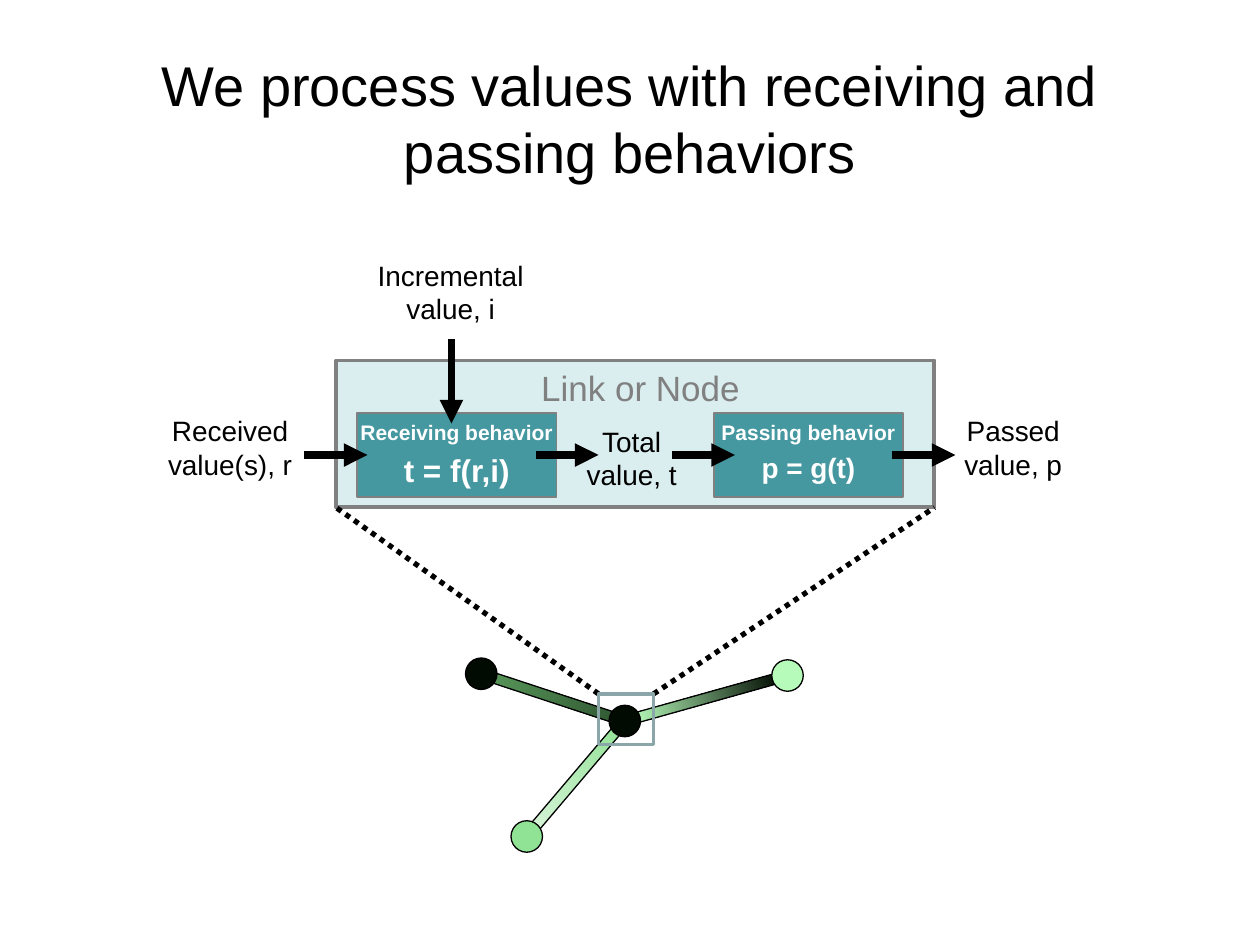
from dataclasses import dataclass
from math import atan2, degrees
from pptx import Presentation
from pptx.dml.color import RGBColor
from pptx.enum import dml, shapes, text
from pptx.oxml import parse_xml
from pptx.oxml.ns import nsdecls
from pptx.util import Pt


@dataclass(frozen=True)
class Theme:
    font: str = "Arial"
    ink: str = "000000"
    white: str = "FFFFFF"
    gray: str = "808080"
    panel: str = "DAEDEF"
    behavior: str = "4597A0"
    focus: str = "8AA6A8"
    dark: str = "010B01"
    green: str = "90E294"
    light: str = "B7FBBA"
    pale: str = "DBF5DC"
    title: int = 32
    heading: int = 20
    formula: int = 18
    label: int = 16
    caption: int = 12


THEME = Theme()
RECTANGLE = shapes.MSO_SHAPE.RECTANGLE
OVAL = shapes.MSO_SHAPE.OVAL


def rgb(color):
    return RGBColor.from_string(color)


def style_text(paragraph, size, color, bold=False):
    paragraph.alignment = text.PP_ALIGN.CENTER
    paragraph.font.name = THEME.font
    paragraph.font.size = Pt(size)
    paragraph.font.bold = bold
    paragraph.font.color.rgb = rgb(color)


def add_label(slide, box, wording, size=THEME.label, color=THEME.ink, bold=False):
    frame = slide.shapes.add_textbox(*map(Pt, box)).text_frame
    frame.word_wrap = True
    frame.text = wording
    style_text(frame.paragraphs[0], size, color, bold)


def add_outlined(slide, kind, box, fill, line, width):
    outlined = slide.shapes.add_shape(kind, *map(Pt, box))
    outlined.shadow.inherit = False
    if fill:
        outlined.fill.solid()
        outlined.fill.fore_color.rgb = rgb(fill)
    else:
        outlined.fill.background()
    outlined.line.color.rgb = rgb(line)
    outlined.line.width = Pt(width)
    return outlined


def add_line(slide, start, end, width):
    line = slide.shapes.add_connector(
        shapes.MSO_CONNECTOR.STRAIGHT, *map(Pt, (*start, *end)))
    line.line.color.rgb = rgb(THEME.ink)
    line.line.width = Pt(width)
    line._element.spPr.append(parse_xml(f"<a:effectLst {nsdecls('a')}/>"))
    return line


def add_arrow(slide, start, end):
    arrow = add_line(slide, start, end, 4.5)
    arrow.line._get_or_add_ln().append(
        parse_xml(f'<a:tailEnd {nsdecls("a")} type="triangle"/>'))


def add_title(slide, box, wording):
    title = slide.shapes.title
    title.left, title.top, title.width, title.height = map(Pt, box)
    title.text_frame.text = wording
    title.text_frame.vertical_anchor = text.MSO_ANCHOR.MIDDLE
    style_text(title.text_frame.paragraphs[0], THEME.title, THEME.ink)


def add_behavior(slide, box, name, formula, size):
    left, top, width, height = box
    add_outlined(slide, RECTANGLE, box, THEME.behavior, THEME.gray, 0.75)
    add_label(slide, (left - 18, top, width + 36, 22), name,
              THEME.caption, THEME.white, True)
    add_label(slide, (left, top + 18, width, 28), formula,
              size, THEME.white, True)


def add_process(slide, box):
    left, top, width, height = box
    add_outlined(slide, RECTANGLE, box, THEME.panel, THEME.gray, 2.25)
    add_label(slide, (left + 78, top, 192, 32), "Link or Node",
              THEME.heading, THEME.gray)
    for x, y, label_width, wording in (
            (11, -62, 109, "Incremental value, i"),
            (-108, 27, 95, "Received value(s), r"),
            (336, 27, 102, "Passed value, p"),
            (130, 33, 78, "Total value, t")):
        add_label(slide, (left + x, top + y, label_width, 46), wording)
    add_behavior(slide, (left + 12, top + 30, 114, 48),
                 "Receiving behavior", "t = f(r,i)", THEME.formula)
    add_behavior(slide, (left + 216, top + 30, 108, 48),
                 "Passing behavior", "p = g(t)", THEME.label)
    add_arrow(slide, (left + 66, top - 12), (left + 66, top + 36))
    for x in (-18, 114, 192, 318):
        add_arrow(slide, (left + x, top + 54), (left + x + 36, top + 54))


def add_link(slide, node, hub, node_color, hub_color):
    length, thickness = 84, 6
    (x1, y1), (x2, y2) = node, hub
    link = add_outlined(
        slide, RECTANGLE,
        ((x1 + x2 - thickness) / 2, (y1 + y2 - length) / 2, thickness, length),
        None, THEME.ink, 0.75)
    link.rotation = degrees(atan2(x1 - x2, y2 - y1))
    link.fill.gradient()
    link.fill.gradient_angle = 270
    for stop, color in zip(link.fill.gradient_stops, (node_color, hub_color)):
        stop.color.rgb = rgb(color)


def add_node(slide, center, color):
    diameter = 18
    x, y = center
    add_outlined(slide, OVAL,
                 (x - diameter / 2, y - diameter / 2, diameter, diameter),
                 color, THEME.ink, 0.75)


def add_network(slide, box):
    left, top, width, height = box
    hub = (left + 91, top + 36)
    branches = (
        ((left + 9, top + 9), THEME.dark, "5A9A5C", "2F5530"),
        ((left + 35, top + height - 9), THEME.green, THEME.pale, THEME.green),
        ((left + width - 9, top + 10), THEME.light, THEME.dark, THEME.light))
    for node, color, node_end, hub_end in branches:
        add_link(slide, node, hub, node_end, hub_end)
    add_node(slide, hub, THEME.dark)
    for node, color, *ends in branches:
        add_node(slide, node, color)


def add_zoom(slide, panel, focus):
    left, top, width, height = panel
    focus_left, focus_top, focus_width, focus_height = focus
    for start, end in (
            ((focus_left + focus_width, focus_top), (left + width, top + height)),
            ((focus_left, focus_top), (left, top + height))):
        ray = add_line(slide, start, end, 3)
        ray.line.dash_style = dml.MSO_LINE.ROUND_DOT
    add_outlined(slide, RECTANGLE, focus, None, THEME.focus, 2)


def main():
    deck = Presentation()
    deck.slide_width, deck.slide_height = Pt(720), Pt(540)
    slide = deck.slides.add_slide(deck.slide_layouts[5])
    panel = (192, 206, 342, 84)
    add_title(slide, (36, 22, 648, 90),
              "We process values with receiving and passing behaviors")
    add_process(slide, panel)
    add_network(slide, (266, 376, 193, 111))
    add_zoom(slide, panel, (342, 396.5, 31.5, 29))
    deck.save("out.pptx")


if __name__ == "__main__":
    main()
